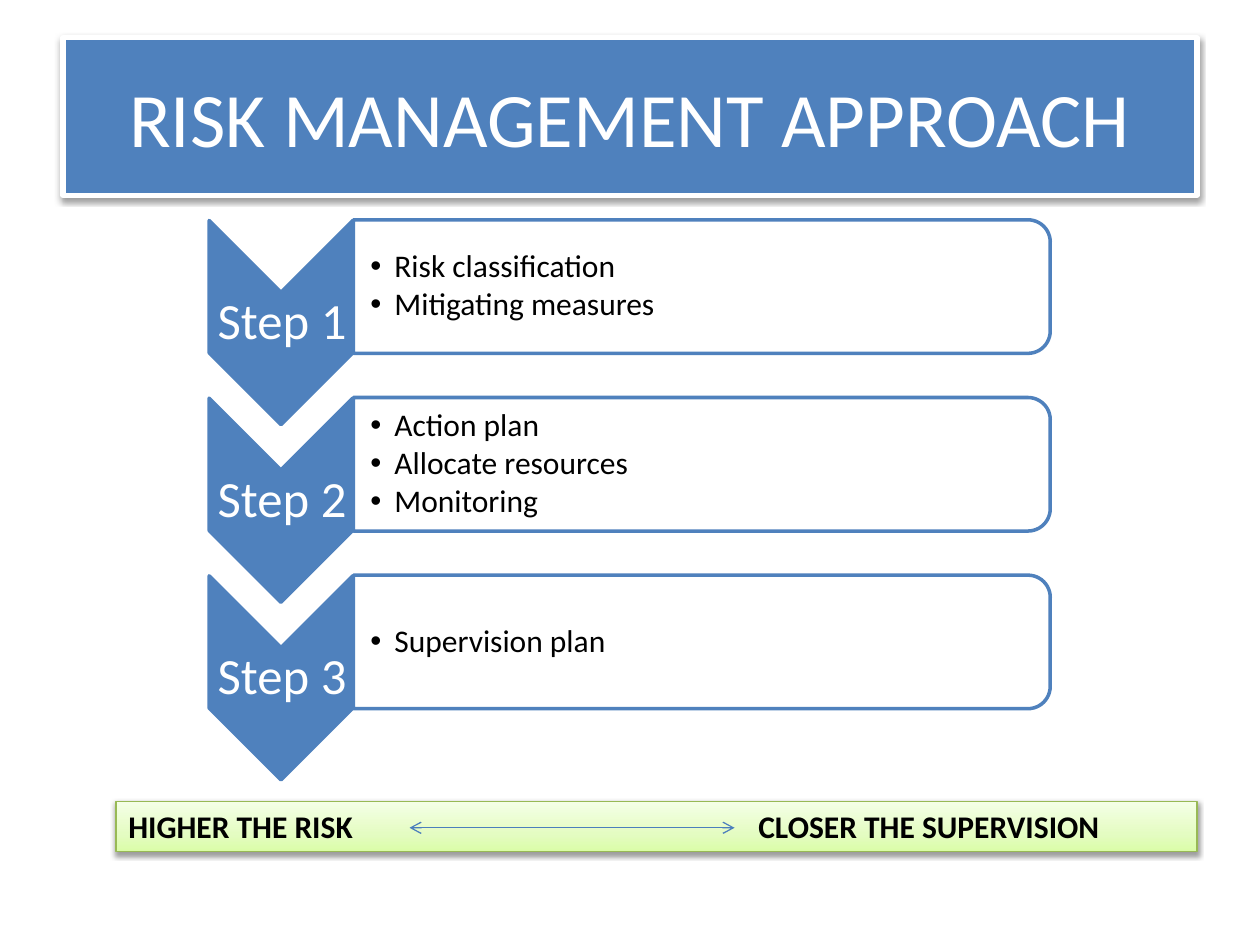
from dataclasses import dataclass
from typing import Any, NamedTuple

from lxml.etree import SubElement
from pptx import Presentation
from pptx.dml.color import RGBColor
from pptx.enum.shapes import MSO_CONNECTOR, MSO_SHAPE
from pptx.enum.text import MSO_ANCHOR as Anchor, MSO_AUTO_SIZE as AutoSize, PP_ALIGN as Align
from pptx.oxml.ns import qn
from pptx.util import Emu, Pt

PX = 9144


@dataclass(frozen=True)
class Theme:
    font: str = "Calibri"
    blue: str = "4F81BD"
    arrow: str = "4B7EBC"
    green_edge: str = "98B955"
    green_stops: tuple = ((0, "DAFDA7"), (35, "E4FCC2"), (100, "F5FFE7"))
    white: str = "FFFFFF"
    black: str = "000000"
    title_size: int = 44
    step_size: int = 29
    body_size: int = 18


class Box(NamedTuple):
    left: int
    top: int
    width: int
    height: int

    def down(self, distance: int) -> "Box":
        return self._replace(top=self.top + distance)

    def emu(self) -> list[Emu]:
        return [px(length) for length in self]


class Step(NamedTuple):
    label: str
    actions: tuple[str, ...]


THEME = Theme()
STEP_PITCH = 141
CHEVRON = Box(142, 199, 162, 114)
LABEL = Box(167, 232, 114, 49)
PANEL = Box(504, -49, 106, 553)
ACTIONS = Box(280, 180, 548, 95)
STEPS = (
    Step("Step 1", ("Risk classification", "Mitigating measures")),
    Step("Step 2", ("Action plan", "Allocate resources", "Monitoring")),
    Step("Step 3", ("Supervision plan",)),
)


def px(length: int) -> Emu:
    return Emu(length * PX)


def rgb(color: str) -> RGBColor:
    return RGBColor.from_string(color)


def write(shape: Any, *lines: str, size: int, color: str, bold: bool = False,
          align: Align = Align.LEFT, anchor: Anchor = Anchor.MIDDLE,
          insets: tuple[int, int, int, int] = (10, 5, 10, 5),
          spacing: float = 1.0, after: float = 0, bullet_indent: int = 0,
          tab: int = 0) -> None:
    frame = shape.text_frame
    frame.word_wrap = True
    frame.vertical_anchor = anchor
    (frame.margin_left, frame.margin_top,
     frame.margin_right, frame.margin_bottom) = map(px, insets)
    for index, line in enumerate(lines):
        paragraph = frame.add_paragraph() if index else frame.paragraphs[0]
        paragraph.alignment = align
        paragraph.line_spacing = spacing
        paragraph.space_after = Pt(after)
        run = paragraph.add_run()
        run.text = line
        run.font.name = THEME.font
        run.font.size = Pt(size)
        run.font.bold = bold
        run.font.color.rgb = rgb(color)
        properties = paragraph._p.get_or_add_pPr()
        if bullet_indent:
            properties.set("marL", str(px(bullet_indent)))
            properties.set("indent", str(-px(bullet_indent)))
            SubElement(properties, qn("a:buFont"), typeface="Arial")
            SubElement(properties, qn("a:buChar"), char="•")
        if tab:
            stops = SubElement(properties, qn("a:tabLst"))
            SubElement(stops, qn("a:tab"), pos=str(px(tab)), algn="l")


def paint(shape: Any, line: str, width: float, fill: str = "", opacity: int = 100) -> None:
    if fill:
        shape.fill.solid()
        shape.fill.fore_color.rgb = rgb(fill)
    if opacity < 100:
        solid = shape._element.spPr.find(qn("a:solidFill"))
        SubElement(solid[0], qn("a:alpha"), val=str(opacity * 1000))
    shape.line.color.rgb = rgb(line)
    shape.line.width = Pt(width)
    shape.shadow.inherit = False


def drop_shadow(shape: Any) -> None:
    effects = shape._element.spPr.find(qn("a:effectLst"))
    shadow = SubElement(effects, qn("a:outerShdw"), blurRad="40000", dist="20000",
                        dir="5400000", rotWithShape="0")
    color = SubElement(shadow, qn("a:srgbClr"), val=THEME.black)
    SubElement(color, qn("a:alpha"), val="38000")


def shade(shape: Any, stops: tuple, angle: int) -> None:
    shape.fill.gradient()
    shape.fill.gradient_angle = angle
    stop_list = shape._element.spPr.find(qn("a:gradFill")).find(qn("a:gsLst"))
    for old in list(stop_list):
        stop_list.remove(old)
    for position, color in stops:
        stop = SubElement(stop_list, qn("a:gs"), pos=str(position * 1000))
        SubElement(stop, qn("a:srgbClr"), val=color)


def draw_title(title: Any) -> None:
    title.left, title.top, title.width, title.height = Box(50, 30, 900, 125).emu()
    paint(title, THEME.white, 3, fill=THEME.blue)
    drop_shadow(title)
    write(title, "RISK MANAGEMENT APPROACH", size=THEME.title_size,
          color=THEME.white, align=Align.CENTER)


def draw_step(shapes: Any, step: Step, offset: int) -> None:
    chevron = shapes.add_shape(MSO_SHAPE.CHEVRON, *CHEVRON.down(offset).emu())
    chevron.rotation = 90
    paint(chevron, THEME.blue, 2, fill=THEME.blue)
    label = shapes.add_textbox(*LABEL.down(offset).emu())
    write(label, step.label, size=THEME.step_size, color=THEME.white,
          align=Align.CENTER, insets=(2, 2, 2, 2), spacing=0.9)
    panel = shapes.add_shape(MSO_SHAPE.ROUND_2_SAME_RECTANGLE, *PANEL.down(offset).emu())
    panel.rotation = 90
    paint(panel, THEME.blue, 2, fill=THEME.white, opacity=90)
    actions = shapes.add_textbox(*ACTIONS.down(offset).emu())
    write(actions, *step.actions, size=THEME.body_size, color=THEME.black,
          insets=(14, 1, 1, 1), spacing=0.9, after=2.25, bullet_indent=19)


def draw_risk_bar(shapes: Any) -> None:
    bar = shapes.add_shape(MSO_SHAPE.RECTANGLE, *Box(92, 636, 858, 40).emu())
    shade(bar, THEME.green_stops, angle=90)
    paint(bar, THEME.green_edge, 0.75)
    drop_shadow(bar)
    write(bar, "HIGHER THE RISK\tCLOSER THE SUPERVISION", size=THEME.body_size,
          color=THEME.black, bold=True, anchor=Anchor.TOP, tab=500)
    bar.text_frame.auto_size = AutoSize.SHAPE_TO_FIT_TEXT


def draw_double_arrow(shapes: Any, left: int, right: int, level: int) -> None:
    arrow = shapes.add_connector(MSO_CONNECTOR.STRAIGHT, px(left), px(level),
                                 px(right), px(level))
    arrow.line.color.rgb = rgb(THEME.arrow)
    arrow.line.width = Pt(0.75)
    properties = arrow._element.spPr
    for end in ("a:headEnd", "a:tailEnd"):
        SubElement(properties.find(qn("a:ln")), qn(end), type="arrow")
    SubElement(properties, qn("a:effectLst"))


def main() -> None:
    deck = Presentation()
    deck.slide_width, deck.slide_height = px(1000), px(750)
    slide = deck.slides.add_slide(deck.slide_layouts[5])
    draw_title(slide.shapes.title)
    steps = slide.shapes.add_group_shape()
    for index, step in enumerate(STEPS):
        draw_step(steps.shapes, step, index * STEP_PITCH)
    draw_risk_bar(slide.shapes)
    draw_double_arrow(slide.shapes, left=325, right=583, level=657)
    deck.save("out.pptx")


if __name__ == "__main__":
    main()
